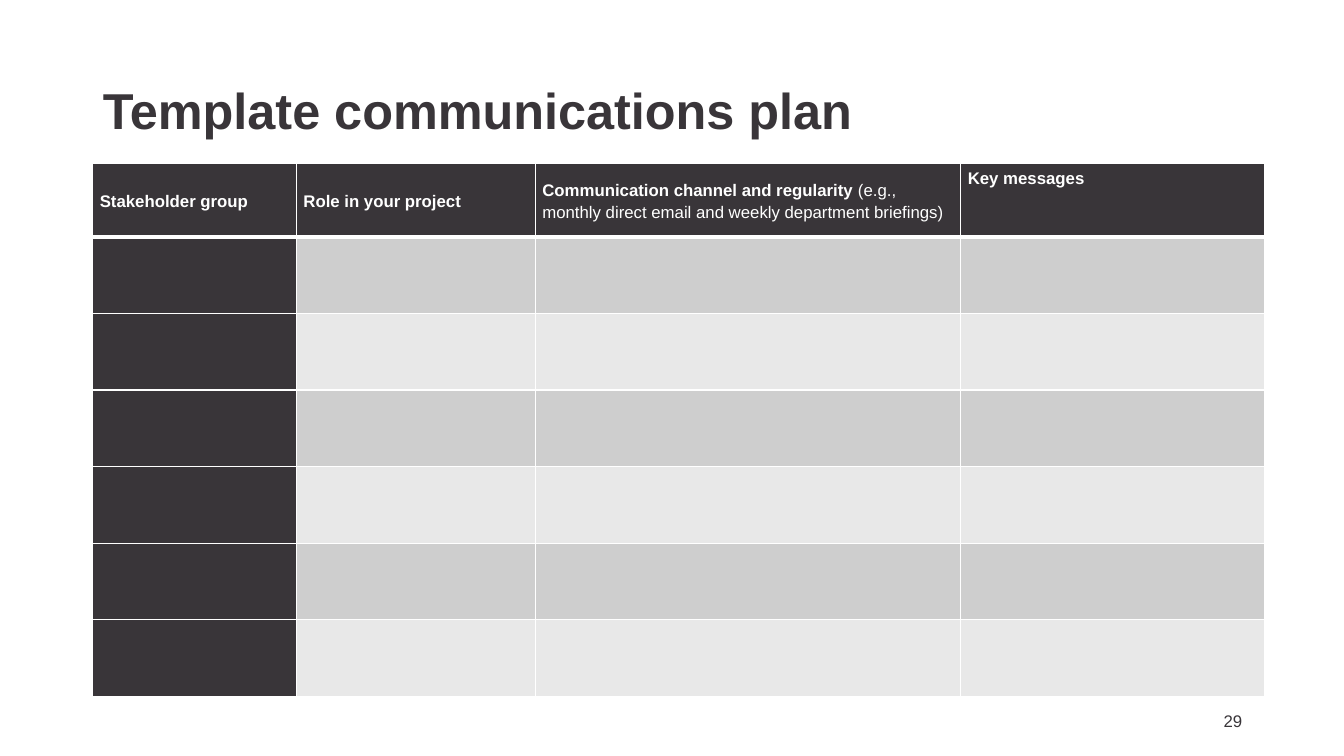
from dataclasses import dataclass
from lxml import etree
from pptx import Presentation
from pptx.dml.color import RGBColor
from pptx.enum.text import MSO_ANCHOR, PP_ALIGN
from pptx.oxml.ns import qn
from pptx.util import Inches, Pt

LEFT, RIGHT = PP_ALIGN.LEFT, PP_ALIGN.RIGHT
TOP, MIDDLE = MSO_ANCHOR.TOP, MSO_ANCHOR.MIDDLE


@dataclass(frozen=True)
class Theme:
    font: str = "Arial"
    dark: str = "393539"
    white: str = "FFFFFF"
    bands: tuple = ("CECECE", "E8E8E8")
    head: int = 36
    body: int = 12
    thin: int = 1
    thick: int = 3


theme = Theme()


def write(frame, *parts, size=theme.body, color=theme.dark, align=LEFT, space=1.0):
    frame.word_wrap = True
    line = frame.paragraphs[0]
    line.alignment = align
    line.line_spacing = space
    for text, bold in parts:
        run = line.add_run()
        run.text = text
        run.font.name = theme.font
        run.font.size = Pt(size)
        run.font.bold = bold
        run.font.color.rgb = RGBColor.from_string(color)


def paint(cell, color, top, base):
    cell.fill.solid()
    cell.fill.fore_color.rgb = RGBColor.from_string(color)
    props = cell._tc.get_or_add_tcPr()
    sides = (("lnL", theme.thin), ("lnR", theme.thin), ("lnT", top), ("lnB", base))
    for place, (side, width) in enumerate(sides):
        edge = etree.Element(qn("a:" + side), w=str(Pt(width)))
        fill = etree.SubElement(edge, qn("a:solidFill"))
        etree.SubElement(fill, qn("a:srgbClr"), val=theme.white)
        props.insert(place, edge)


deck = Presentation()
deck.slide_width, deck.slide_height = Inches(13.33), Inches(7.5)
slide = deck.slides.add_slide(deck.slide_layouts[5])

left = Inches(0.92)
title = slide.shapes.title
title.left, title.top = left, Inches(0.4)
title.width, title.height = Inches(11.5), Inches(1.45)
title.text_frame.vertical_anchor = MIDDLE
write(title.text_frame, ("Template communications plan", True),
      size=theme.head, space=0.9)

page = slide.shapes.add_textbox(Inches(9.42), Inches(6.95), Inches(3), Inches(0.4))
page.text_frame.vertical_anchor = MIDDLE
write(page.text_frame, ("29", False), align=RIGHT)

heads = (
    (("Stakeholder group", True),),
    (("Role in your project", True),),
    (("Communication channel and regularity ", True),
     ("(e.g., monthly direct email and weekly department briefings)", False)),
    (("Key messages", True),),
)
widths = (2.02, 2.37, 4.22, 3.01)
heights = (0.73,) + (0.76,) * 6
frame = slide.shapes.add_table(
    len(heights), len(widths), left, Inches(1.62),
    Inches(sum(widths)), Inches(sum(heights)))
table = frame.table

for col, width in zip(table.columns, widths):
    col.width = Inches(width)
for row, height in zip(table.rows, heights):
    row.height = Inches(height)

for r in range(len(heights)):
    for c in range(len(widths)):
        color = theme.dark if r == 0 or c == 0 else theme.bands[(r - 1) % 2]
        top = theme.thick if r == 1 else theme.thin
        base = theme.thick if r == 0 else theme.thin
        paint(table.cell(r, c), color, top, base)

for c, parts in enumerate(heads):
    cell = table.cell(0, c)
    last = c == len(heads) - 1
    cell.margin_left = cell.margin_right = Inches(0.07)
    cell.margin_top = Inches(0.03 if last else 0)
    cell.margin_bottom = 0
    cell.vertical_anchor = TOP if last else MIDDLE
    write(cell.text_frame, *parts, color=theme.white, space=1.15)

deck.save("out.pptx")
